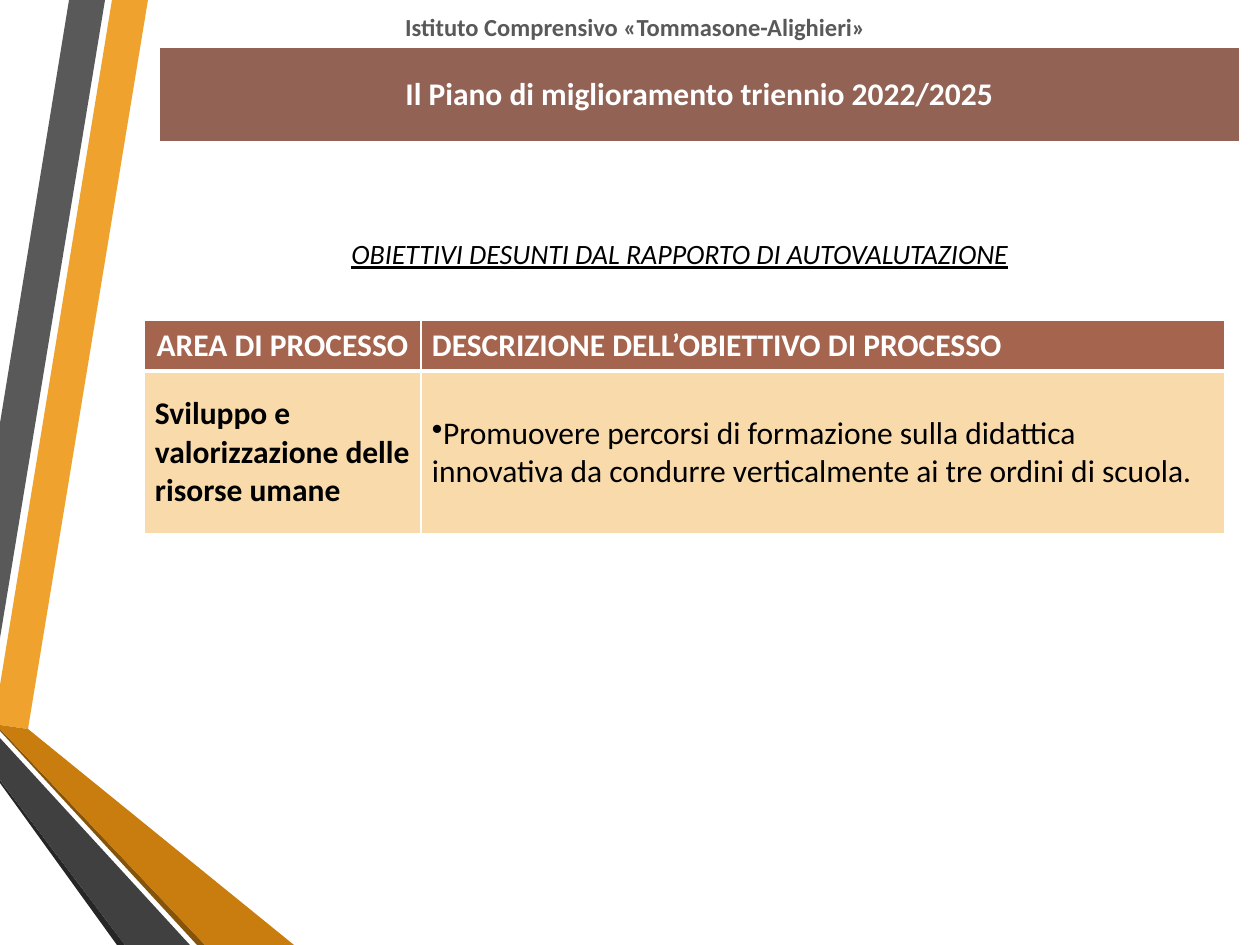
from lxml import etree
from pptx import Presentation
from pptx.dml.color import RGBColor
from pptx.enum.text import MSO_ANCHOR, PP_ALIGN
from pptx.oxml.ns import qn
from pptx.util import Pt

PX = 914400 / 126
FONT = "Calibri"
CENTER, LEFT = PP_ALIGN.CENTER, PP_ALIGN.LEFT
MIDDLE = MSO_ANCHOR.MIDDLE
TITLE_ONLY = 5

COLORS = {
    "white": "FFFFFF", "black": "000000", "gray": "595959",
    "dark_gray": "404040", "near_black": "262626",
    "orange": "F0A22E", "dark_orange": "C87D0E", "brown": "85540A",
    "banner": "926255", "header": "A5644E", "body": "F9DAAB",
}

# Ribbon outlines in px, from back to front
RIBBONS = [
    ("orange", [(0, 685), (0, 725), (28, 729), (148, 0), (112, 0)]),
    ("gray", [(105, 0), (69, 0), (0, 423), (0, 638)]),
    ("near_black", [(0, 780), (0, 783), (117, 945), (125, 945)]),
    ("brown", [(0, 729), (0, 731), (197, 945), (205, 945)]),
    ("dark_orange", [(0, 729), (205, 945), (294, 945), (28, 729), (0, 725)]),
    ("dark_gray", [(0, 780), (125, 945), (190, 945), (0, 738)]),
]


def px(n):
    return round(n * PX)


def rgb(name):
    return RGBColor.from_string(COLORS[name])


def write(tf, text, size, color, align=CENTER, bold=False, italic=False, underline=False):
    tf.text = text
    p = tf.paragraphs[0]
    p.alignment = align
    font = p.runs[0].font
    font.name, font.size = FONT, Pt(size)
    font.bold, font.italic, font.underline = bold, italic, underline
    font.color.rgb = rgb(color)


def add_bullet(p):
    pPr = p._p.get_or_add_pPr()
    pPr.set("marL", "0")
    pPr.set("indent", "0")
    etree.SubElement(pPr, qn("a:buChar")).set("char", "•")


def set_borders(cell, top, bottom):
    tcPr = cell._tc.get_or_add_tcPr()
    for side, width in (("L", 1), ("R", 1), ("T", top), ("B", bottom)):
        ln = etree.SubElement(tcPr, qn(f"a:ln{side}"), w=str(Pt(width)))
        fill = etree.SubElement(ln, qn("a:solidFill"))
        etree.SubElement(fill, qn("a:srgbClr"), val=COLORS["white"])


def fill_cell(cell, fill):
    cell.vertical_anchor = MIDDLE
    cell.margin_left = cell.margin_right = px(11)
    cell.margin_top = cell.margin_bottom = px(4)
    cell.fill.solid()
    cell.fill.fore_color.rgb = rgb(fill)


def add_grid(s, x, y, widths, heights):
    frame = s.shapes.add_table(len(heights), len(widths), px(x), px(y),
                               px(sum(widths)), px(sum(heights)))
    table = frame.table
    for col, w in zip(table.columns, widths):
        col.width = px(w)
    for row, h in zip(table.rows, heights):
        row.height = px(h)
    return table


def add_ribbons(s, x, y):
    for color, points in RIBBONS:
        start, *rest = [(x + a, y + b) for a, b in points]
        builder = s.shapes.build_freeform(*start, scale=PX)
        builder.add_line_segments(rest, close=True)
        sp = builder.convert_to_shape()
        sp.shadow.inherit = False
        sp.fill.solid()
        sp.fill.fore_color.rgb = rgb(color)
        sp.line.fill.background()


def add_title(s, x, y, w, h):
    title = s.shapes.title
    title.left, title.top, title.width, title.height = map(px, (x, y, w, h))
    title.text_frame.vertical_anchor = MIDDLE
    write(title.text_frame, "Istituto Comprensivo «Tommasone-Alighieri»", 14, "gray", bold=True)


def add_banner(s, x, y, w, h):
    cell = add_grid(s, x, y, [w], [h]).cell(0, 0)
    fill_cell(cell, "banner")
    write(cell.text_frame, "Il Piano di miglioramento triennio 2022/2025", 18, "white", bold=True)


def add_subtitle(s, x, y, w, h):
    tf = s.shapes.add_textbox(*map(px, (x, y, w, h))).text_frame
    tf.word_wrap = True
    write(tf, "OBIETTIVI DESUNTI DAL RAPPORTO DI AUTOVALUTAZIONE", 16, "black",
          italic=True, underline=True)


def add_objectives(s, x, y, widths, heights):
    table = add_grid(s, x, y, widths, heights)
    header = ["AREA DI PROCESSO", "DESCRIZIONE DELL’OBIETTIVO DI PROCESSO"]
    body = ["Sviluppo e valorizzazione delle risorse umane",
            "Promuovere percorsi di formazione sulla didattica innovativa "
            "da condurre verticalmente ai tre ordini di scuola."]
    for c, text in enumerate(header):
        cell = table.cell(0, c)
        set_borders(cell, 1, 3)
        fill_cell(cell, "header")
        write(cell.text_frame, text, 18, "white", LEFT if c else CENTER, bold=True)
    for c, text in enumerate(body):
        cell = table.cell(1, c)
        set_borders(cell, 3, 1)
        fill_cell(cell, "body")
        write(cell.text_frame, text, 18, "black", LEFT, bold=c == 0)
    add_bullet(table.cell(1, 1).text_frame.paragraphs[0])


def main():
    prs = Presentation()
    prs.slide_width, prs.slide_height = px(1260), px(945)
    s = prs.slides.add_slide(prs.slide_layouts[TITLE_ONLY])
    add_ribbons(s, 0, 0)
    add_subtitle(s, 164, 230, 1032, 47)
    add_objectives(s, 144, 320, [277, 804], [51, 163])
    add_title(s, 144, 5, 983, 43)
    add_banner(s, 159, 47, 1081, 95)
    prs.save("out.pptx")


if __name__ == "__main__":
    main()
